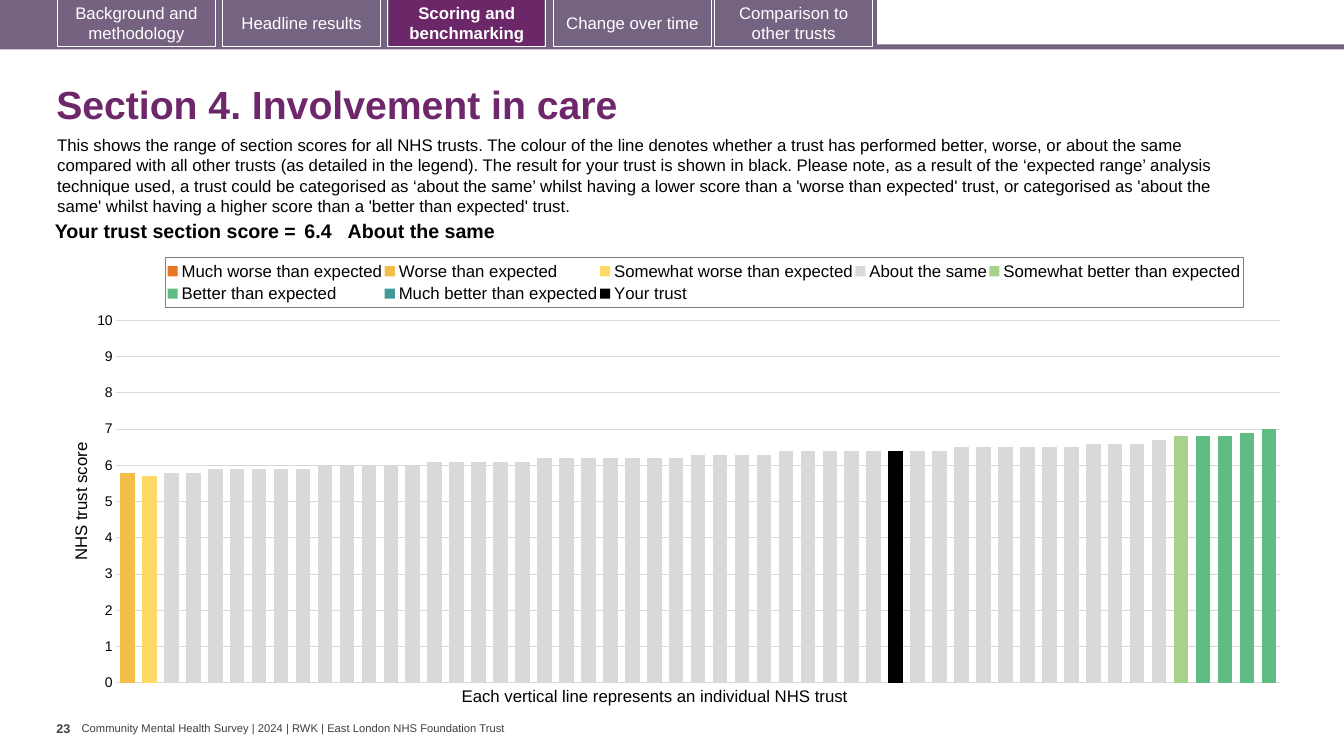
"""Builds the section score slide: tabs, heading, score line and ranked column chart of trusts."""
from copy import deepcopy

from lxml import etree
from pptx import Presentation
from pptx.chart.data import CategoryChartData
from pptx.dml.color import RGBColor
from pptx.enum.chart import XL_CHART_TYPE, XL_LEGEND_POSITION, XL_TICK_LABEL_POSITION, XL_TICK_MARK
from pptx.enum.shapes import MSO_SHAPE
from pptx.enum.text import MSO_ANCHOR, PP_ALIGN
from pptx.oxml import parse_xml
from pptx.oxml.ns import qn
from pptx.util import Pt

RECT = MSO_SHAPE.RECTANGLE
TOP, MIDDLE = MSO_ANCHOR.TOP, MSO_ANCHOR.MIDDLE
LEFT, CENTER, RIGHT = PP_ALIGN.LEFT, PP_ALIGN.CENTER, PP_ALIGN.RIGHT
COLUMNS = XL_CHART_TYPE.COLUMN_CLUSTERED
LEGEND_TOP = XL_LEGEND_POSITION.TOP
NO_LABELS, LABELS = XL_TICK_LABEL_POSITION.NONE, XL_TICK_LABEL_POSITION.NEXT_TO_AXIS
NO_TICK, TICK_OUT = XL_TICK_MARK.NONE, XL_TICK_MARK.OUTSIDE
NAMESPACES = ('xmlns:c="http://schemas.openxmlformats.org/drawingml/2006/chart" '
              'xmlns:a="http://schemas.openxmlformats.org/drawingml/2006/main"')

BANDS = [
    (0, 31.7, 960, 3.6, "756382"),
    (0, 0, 626.4, 33.8, "756382"),
    (42.5, 0, 110.9, 33.1, "746280"),
    (277.9, 0, 110.9, 33.1, "6B2768"),
]
TABS = [
    ("Background and methodology", 41, "746280", False),
    ("Headline results", 159, None, False),
    ("Scoring and benchmarking", 277, None, True),
    ("Change over time", 395.3, "756382", False),
    ("Comparison to other trusts", 510.5, "756382", False),
]
INTRO = (
    "This shows the range of section scores for all NHS trusts. The colour of the line denotes "
    "whether a trust has performed better, worse, or about the same compared with all other trusts "
    "(as detailed in the legend). The result for your trust is shown in black. Please note, as a "
    "result of the ‘expected range’ analysis technique used, a trust could be categorised as "
    "‘about the same’ whilst having a lower score than a 'worse than expected' trust, or "
    "categorised as 'about the same' whilst having a higher score than a 'better than expected' trust."
)
FOOTER = "Community Mental Health Survey | 2024 | RWK | East London NHS Foundation Trust"
AXIS_NOTE = "Each vertical line represents an individual NHS trust"
TEXTS = [
    (FOOTER, (58.3, 515.5, 306.7, 9.4), 8, "404040", False, MIDDLE, False, (0, 0)),
    ("Section 4. Involvement in care", (33.1, 48.2, 899.3, 51.8), 28, "6D276A", True, MIDDLE, True, (7.2, 3.6)),
    ("23", (40.3, 511.2, 18, 28.8), 9, "404040", True, TOP, False, (0, 3.6)),
    (INTRO, (33.8, 92.9, 873.4, 65.5), 12, "000000", False, TOP, True, (7.2, 3.6)),
    (AXIS_NOTE, (322.6, 486, 295.9, 21.6), 12, "000000", False, TOP, False, (7.2, 3.6)),
]
SCORE_CELLS = [
    ("Your trust section score =", 189.4, RIGHT, 2.9),
    ("6.4", 33.8, LEFT, 2.9),
    ("About the same", 618.5, LEFT, 0),
]
TRUST_COUNT = 53
SAME_SCORES = ([5.8] * 2 + [5.9] * 5 + [6] * 5 + [6.1] * 5 + [6.2] * 7 + [6.3] * 4
               + [6.4] * 8 + [6.5] * 6 + [6.6] * 3 + [6.7])
RATINGS = [
    ("Much worse than expected", "E87722", 0, []),
    ("Worse than expected", "F1BE48", 0, [5.8]),
    ("Somewhat worse than expected", "FFD966", 1, [5.7]),
    ("About the same", "D9D9D9", 2, SAME_SCORES),
    ("Somewhat better than expected", "A9D18E", 48, [6.8]),
    ("Better than expected", "5FBD83", 49, [6.8, 6.8, 6.9, 7]),
    ("Much better than expected", "419999", 0, []),
    ("Your trust", "000000", 35, [6.4]),
]
PLOT_AREA = (0.04, 0.16, 0.95, 0.81)
LEGEND_AREA = (0.08, 0.02, 0.88, 0.11)


def rgb(value):
    return RGBColor.from_string(value)


def apply(target, formats):
    for name, value in formats.items():
        setattr(target, name, value)


def style_font(font, size, color="000000", bold=False, name="Arial"):
    apply(font, {"name": name, "size": Pt(size), "bold": bold})
    font.color.rgb = rgb(color)


def write(frame, text, size, color, bold, align=LEFT):
    paragraph = frame.paragraphs[0]
    paragraph.alignment = align
    run = paragraph.add_run()
    run.text = text
    style_font(run.font, size, color, bold)
    return paragraph


def add_box(slide, box, fill, line=None):
    shape = slide.shapes.add_shape(RECT, *map(Pt, box))
    shape.shadow.inherit = False
    if fill:
        shape.fill.solid()
        shape.fill.fore_color.rgb = rgb(fill)
    else:
        shape.fill.background()
    if line:
        shape.line.color.rgb = rgb(line)
        shape.line.width = Pt(0.75)
    else:
        shape.line.fill.background()
    return shape


def layout_xml(area, inner=False):
    target = '<c:layoutTarget val="inner"/>' if inner else ""
    modes = "".join(f'<c:{edge}Mode val="edge"/>' for edge in "xy")
    values = "".join(f'<c:{key} val="{value}"/>' for key, value in zip("xywh", area))
    return parse_xml(f"<c:layout {NAMESPACES}><c:manualLayout>{target}{modes}{values}"
                     "</c:manualLayout></c:layout>")


def move_last_to_second_axis(plot_area):
    ratings = plot_area.find(qn("c:barChart"))
    own = deepcopy(ratings)
    ratings.remove(ratings.findall(qn("c:ser"))[-1])
    for series in own.findall(qn("c:ser"))[:-1]:
        own.remove(series)
    ratings.addnext(own)
    axes = [deepcopy(plot_area.find(qn(tag))) for tag in ("c:catAx", "c:valAx")]
    ids = ["5001", "5002"]
    for reference, axis_id in zip(own.findall(qn("c:axId")), ids):
        reference.set("val", axis_id)
    last = plot_area.find(qn("c:valAx"))
    for axis, axis_id, cross_id in zip(axes, ids, reversed(ids)):
        axis.find(qn("c:axId")).set("val", axis_id)
        axis.find(qn("c:crossAx")).set("val", cross_id)
        last.addnext(axis)
        last = axis
    axes[1].find(qn("c:axPos")).set("val", "r")
    axes[1].find(qn("c:crosses")).set("val", "max")


def add_score_chart(slide):
    data = CategoryChartData()
    data.categories = [str(number + 1) for number in range(TRUST_COUNT)]
    for name, _, start, scores in RATINGS:
        gap_after = TRUST_COUNT - start - len(scores)
        data.add_series(name, [None] * start + scores + [None] * gap_after)
    chart = slide.shapes.add_chart(COLUMNS, Pt(48.2), Pt(177.8), Pt(874.8), Pt(319.7), data).chart
    style_font(chart.font, 10, name="Calibri")
    chart.has_title = False
    plot = chart.plots[0]
    apply(plot, {"gap_width": 50, "overlap": 100, "vary_by_categories": False})
    for series, (_, color, _, _) in zip(plot.series, RATINGS):
        series.format.fill.solid()
        series.format.fill.fore_color.rgb = rgb(color)

    chart.category_axis.visible = False
    axis = chart.value_axis
    apply(axis, {"minimum_scale": 0, "maximum_scale": 10, "major_unit": 1, "has_major_gridlines": False,
                 "major_tick_mark": TICK_OUT, "tick_label_position": NO_LABELS})
    axis.format.line.fill.background()
    plot_area = plot._element.getparent()
    move_last_to_second_axis(plot_area)

    apply(axis, {"has_major_gridlines": True, "major_tick_mark": NO_TICK, "tick_label_position": LABELS})
    axis.major_gridlines.format.line.color.rgb = rgb("D9D9D9")
    axis.major_gridlines.format.line.width = Pt(0.75)
    apply(axis.tick_labels, {"number_format": "0", "number_format_is_linked": False})
    style_font(axis.tick_labels.font, 10)
    title = axis.axis_title.text_frame
    write(title, "NHS trust score", 12, "000000", False, CENTER)
    title._txBody.find(qn("a:bodyPr")).set("rot", "-5400000")

    chart.has_legend = True
    legend = chart.legend
    apply(legend, {"position": LEGEND_TOP, "include_in_layout": False})
    style_font(legend.font, 12)
    legend_xml = legend._element
    for parent in (plot_area, legend_xml):
        etree.strip_elements(parent, qn("c:layout"))
    plot_area.insert(0, layout_xml(PLOT_AREA, inner=True))
    legend_xml.find(qn("c:legendPos")).addnext(layout_xml(LEGEND_AREA))
    legend_xml.find(qn("c:txPr")).addprevious(parse_xml(
        f'<c:spPr {NAMESPACES}><a:ln w="9525"><a:solidFill><a:srgbClr val="7F7F7F"/>'
        "</a:solidFill></a:ln></c:spPr>"))


def add_score_line(slide):
    width = sum(cell[1] for cell in SCORE_CELLS)
    table = slide.shapes.add_table(1, len(SCORE_CELLS), Pt(25.2), Pt(154.8), Pt(width), Pt(15.8)).table
    apply(table, {"first_row": False, "horz_banding": False})
    for index, (text, column_width, align, inset) in enumerate(SCORE_CELLS):
        table.columns[index].width = Pt(column_width)
        cell = table.cell(0, index)
        cell.fill.background()
        apply(cell, {"margin_left": Pt(inset), "margin_right": Pt(inset),
                     "margin_top": Pt(2.9), "margin_bottom": Pt(2.9)})
        write(cell.text_frame, text, 14, "000000", True, align)


def main():
    deck = Presentation()
    apply(deck, {"slide_width": Pt(960), "slide_height": Pt(540)})
    slide = deck.slides.add_slide(deck.slide_layouts[6])
    for *box, fill in BANDS:
        add_box(slide, box, fill)
    for label, left, fill, active in TABS:
        tab = add_box(slide, (left, -0.7, 113, 33.8), fill, "FFFFFF")
        apply(tab.text_frame, {"word_wrap": True, "vertical_anchor": MIDDLE})
        write(tab.text_frame, label, 12, "FFFFFF", active, CENTER)
    for text, box, size, color, bold, anchor, wrap, (side, edge) in TEXTS:
        frame = slide.shapes.add_textbox(*map(Pt, box)).text_frame
        apply(frame, {"word_wrap": wrap, "vertical_anchor": anchor, "margin_left": Pt(side),
                      "margin_right": Pt(side), "margin_top": Pt(edge), "margin_bottom": Pt(edge)})
        write(frame, text, size, color, bold)
    add_score_chart(slide)
    add_score_line(slide)
    deck.save("out.pptx")


if __name__ == "__main__":
    main()
